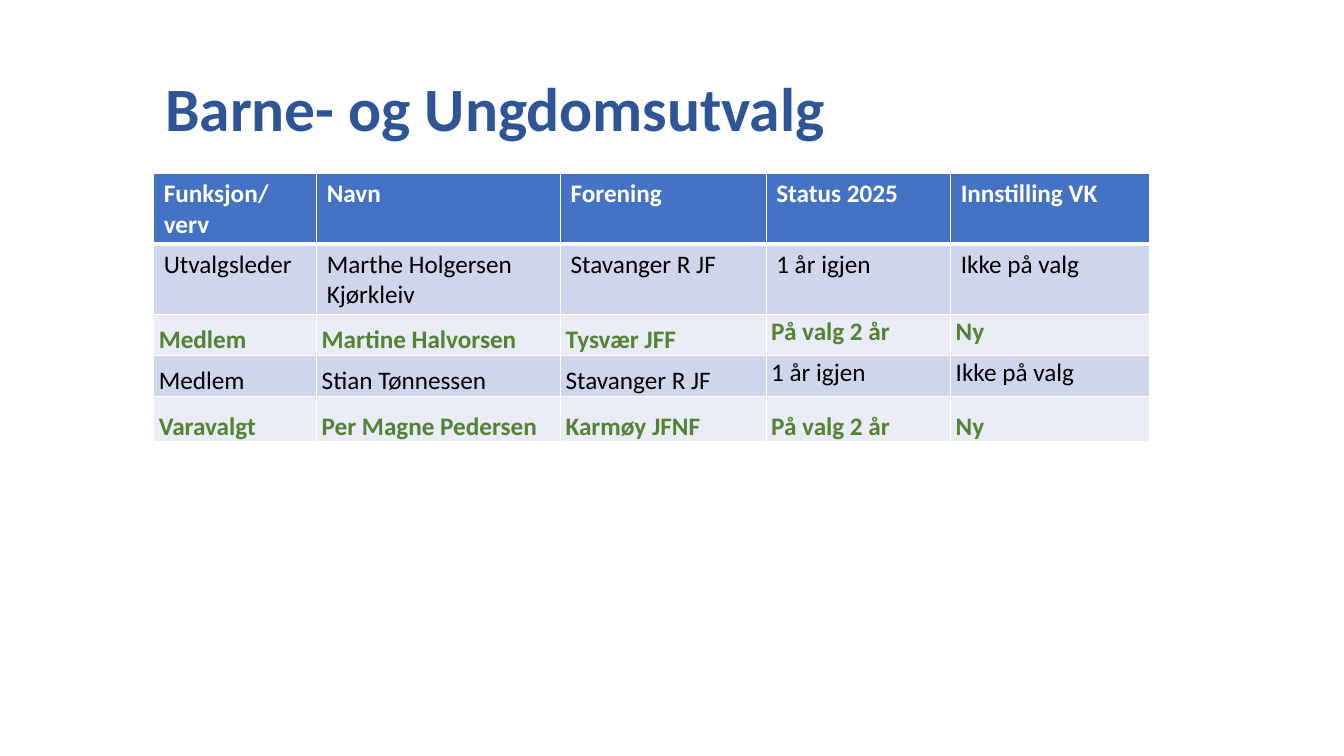
"""Build the slide that lists the children and youth committee."""
from dataclasses import dataclass

from lxml import etree
from pptx import Presentation
from pptx.dml.color import RGBColor
from pptx.enum import text
from pptx.oxml import ns
from pptx.util import Pt

FONT = "Calibri"
WHITE, BLACK, GREEN, TITLE_BLUE = "FFFFFF", "000000", "548235", "2F5597"
HEADER_FILL, DARK_BAND, LIGHT_BAND = "4472C4", "CFD5EA", "E9EBF5"
COLUMN_WIDTHS = (116.4, 174.2, 146.9, 131.8, 141.8)
ROW_HEIGHT = 29.2
BOTTOM_COLUMNS = 3


@dataclass(frozen=True)
class CommitteeRow:
    entries: tuple[str, ...]
    fill: str
    color: str = BLACK
    bold: bool = False
    line_spacing: float | None = None
    top_border: float = 1
    bottom_border: float = 1


ROWS = (
    CommitteeRow(("Funksjon/verv", "Navn", "Forening", "Status 2025", "Innstilling VK"),
                 HEADER_FILL, WHITE, True, bottom_border=3),
    CommitteeRow(("Utvalgsleder", "Marthe Holgersen Kjørkleiv", "Stavanger R JF",
                  "1 år igjen", "Ikke på valg"), DARK_BAND, top_border=3),
    CommitteeRow(("Medlem", "Martine Halvorsen", "Tysvær JFF", "På valg 2 år", "Ny"),
                 LIGHT_BAND, GREEN, True, 1.05),
    CommitteeRow(("Medlem", "Stian Tønnessen", "Stavanger R JF", "1 år igjen", "Ikke på valg"),
                 DARK_BAND, line_spacing=1.05),
    CommitteeRow(("Varavalgt", "Per Magne Pedersen", "Karmøy JFNF", "På valg 2 år", "Ny"),
                 LIGHT_BAND, GREEN, True, 1.5),
)


def rgb(value: str) -> RGBColor:
    return RGBColor.from_string(value)


def add_run(paragraph, content: str, size: float, color: str, bold: bool) -> None:
    run = paragraph.add_run()
    run.text = content
    run.font.name = FONT
    run.font.size = Pt(size)
    run.font.bold = bold
    run.font.color.rgb = rgb(color)


def add_border(cell, side: str, width: float) -> None:
    properties = cell._tc.get_or_add_tcPr()
    line = etree.SubElement(properties, ns.qn(f"a:ln{side}"), w=str(Pt(width)))
    fill = etree.SubElement(line, ns.qn("a:solidFill"))
    etree.SubElement(fill, ns.qn("a:srgbClr"), val=WHITE)


def fill_cell(cell, row: CommitteeRow, column: int) -> None:
    for side, width in (("L", 1), ("R", 1), ("T", row.top_border), ("B", row.bottom_border)):
        add_border(cell, side, width)
    cell.fill.solid()
    cell.fill.fore_color.rgb = rgb(row.fill)
    paragraph = cell.text_frame.paragraphs[0]
    if row.line_spacing:
        cell.margin_left = cell.margin_right = Pt(3.6)
        cell.margin_top = cell.margin_bottom = Pt(0)
        paragraph.line_spacing = row.line_spacing
        paragraph.space_after = Pt(8)
        if column < BOTTOM_COLUMNS:
            cell.vertical_anchor = text.MSO_ANCHOR.BOTTOM
    add_run(paragraph, row.entries[column], 18, row.color, row.bold)


def add_title(slide) -> None:
    title = slide.shapes.add_textbox(Pt(110.9), Pt(27.4), Pt(709.2), Pt(104.4))
    frame = title.text_frame
    frame.word_wrap = True
    frame.vertical_anchor = text.MSO_ANCHOR.MIDDLE
    paragraph = frame.paragraphs[0]
    paragraph.line_spacing = 0.9
    add_run(paragraph, "Barne- og Ungdomsutvalg", 44, TITLE_BLUE, True)


def add_committee_table(slide) -> None:
    table = slide.shapes.add_table(
        len(ROWS), len(COLUMN_WIDTHS), Pt(109.8), Pt(124),
        Pt(sum(COLUMN_WIDTHS)), Pt(ROW_HEIGHT * len(ROWS))).table
    for column, width in zip(table.columns, COLUMN_WIDTHS):
        column.width = Pt(width)
    for row_index, row in enumerate(ROWS):
        table.rows[row_index].height = Pt(ROW_HEIGHT)
        for column in range(len(COLUMN_WIDTHS)):
            fill_cell(table.cell(row_index, column), row, column)


def main() -> None:
    presentation = Presentation()
    presentation.slide_width, presentation.slide_height = Pt(960), Pt(540)
    slide = presentation.slides.add_slide(presentation.slide_layouts[6])
    add_title(slide)
    add_committee_table(slide)
    presentation.save("out.pptx")


if __name__ == "__main__":
    main()
